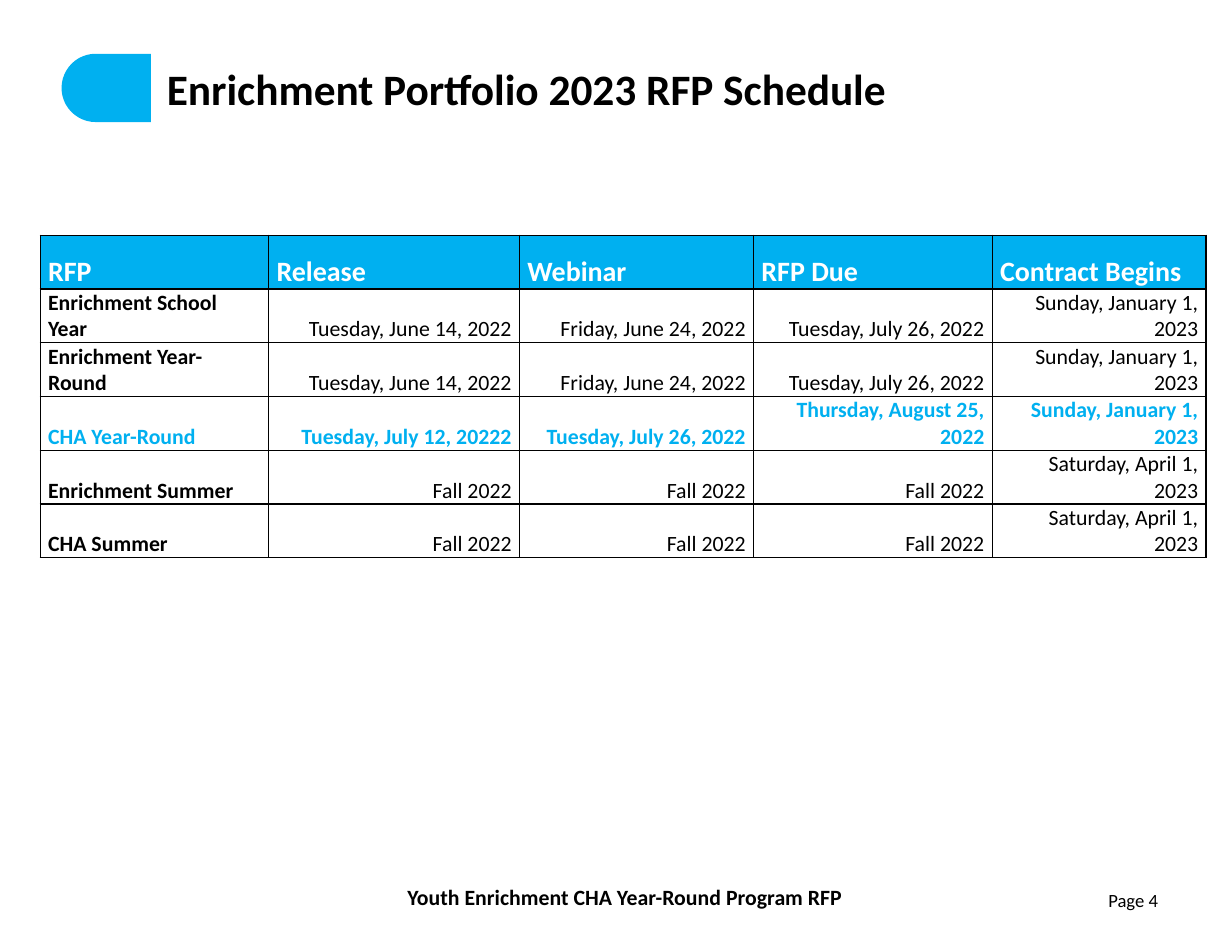
from dataclasses import dataclass

from lxml.etree import SubElement
from pptx import Presentation
from pptx.dml.color import RGBColor
from pptx.enum.shapes import MSO_SHAPE as Shape
from pptx.enum.text import MSO_ANCHOR as Anchor, PP_ALIGN as Align
from pptx.oxml import parse_xml
from pptx.oxml.ns import nsdecls, qn
from pptx.util import Inches, Pt


@dataclass(frozen=True)
class Theme:
    """Colours, typeface and type sizes of the slide."""
    accent: str = "00B0F0"
    dark: str = "000000"
    light: str = "FFFFFF"
    font: str = "Calibri"
    title: float = 27.9
    header: float = 18
    body: float = 14
    small: float = 12


class SlideBuilder:
    """Draws styled elements on the current slide."""

    def __init__(self, slide, theme):
        self.slide = slide
        self.theme = theme

    def fill_text(self, frame, text, size, color, bold=False, align=Align.LEFT,
                  anchor=Anchor.MIDDLE, margins=(0.11, 0.06)):
        """Fill a text frame with one formatted paragraph."""
        side, edge = (Inches(margin) for margin in margins)
        frame_format = {"word_wrap": True, "vertical_anchor": anchor,
                        "margin_left": side, "margin_right": side,
                        "margin_top": edge, "margin_bottom": edge}
        for name, value in frame_format.items():
            setattr(frame, name, value)
        paragraph = frame.paragraphs[0]
        paragraph.alignment = align
        run = paragraph.add_run()
        run.text = text
        font_format = {"name": self.theme.font, "size": Pt(size), "bold": bold}
        for name, value in font_format.items():
            setattr(run.font, name, value)
        run.font.color.rgb = RGBColor.from_string(color)

    def panel(self, kind, box, color, line_width=0):
        """Add a filled shape, outlined in its own colour if a width is given."""
        shape = self.slide.shapes.add_shape(kind, *map(Inches, box))
        shape.shadow.inherit = False
        shape.fill.solid()
        shape.fill.fore_color.rgb = RGBColor.from_string(color)
        if line_width:
            shape.line.color.rgb = RGBColor.from_string(color)
            shape.line.width = Pt(line_width)
        else:
            shape.line.fill.background()
        return shape

    def title(self, text, box):
        """Move the title placeholder in front and fill it."""
        title = self.slide.shapes.title
        for name, value in zip(("left", "top", "width", "height"), box):
            setattr(title, name, Inches(value))
        self.slide.shapes._spTree.append(title._element)
        self.fill_text(title.text_frame, text, self.theme.title, self.theme.dark, True)

    def text(self, text, box, size, **style):
        """Add a text box."""
        shape = self.slide.shapes.add_textbox(*map(Inches, box))
        self.fill_text(shape.text_frame, text, size, self.theme.dark, **style)

    def border(self, cell):
        """Draw a thin dark line on every side of a cell."""
        properties = cell._tc.get_or_add_tcPr()
        for index, side in enumerate(("lnL", "lnR", "lnT", "lnB")):
            line = parse_xml(f'<a:{side} {nsdecls("a")} w="{Pt(1)}"/>')
            fill = SubElement(line, qn("a:solidFill"))
            SubElement(fill, qn("a:srgbClr"), val=self.theme.dark)
            properties.insert(index, line)

    def table(self, rows, left, top, widths, row_height, highlighted):
        """Add a schedule with a header row and one highlighted row."""
        theme = self.theme
        frame = self.slide.shapes.add_table(
            len(rows), len(widths), Inches(left), Inches(top),
            Inches(sum(widths)), Inches(row_height * len(rows)))
        table = frame.table
        table.first_row = table.horz_banding = False
        for column, width in zip(table.columns, widths):
            column.width = Inches(width)
        for row_index, row in enumerate(rows):
            is_header = row_index == 0
            is_highlighted = row[0] == highlighted
            color = (theme.light if is_header
                     else theme.accent if is_highlighted else theme.dark)
            for column_index, text in enumerate(row):
                cell = table.cell(row_index, column_index)
                is_label = is_header or column_index == 0
                self.border(cell)
                if is_header:
                    cell.fill.solid()
                    cell.fill.fore_color.rgb = RGBColor.from_string(theme.accent)
                else:
                    cell.fill.background()
                self.fill_text(cell.text_frame, text,
                               theme.header if is_header else theme.body, color,
                               bold=is_label or is_highlighted,
                               align=Align.LEFT if is_label else Align.RIGHT)
                cell_format = {"vertical_anchor": Anchor.BOTTOM,
                               "margin_left": Inches(0.07),
                               "margin_right": Inches(0.07),
                               "margin_top": 0, "margin_bottom": 0}
                for name, value in cell_format.items():
                    setattr(cell, name, value)


SCHEDULE = [
    ("RFP", "Release", "Webinar", "RFP Due", "Contract Begins"),
    ("Enrichment School Year", "Tuesday, June 14, 2022", "Friday, June 24, 2022",
     "Tuesday, July 26, 2022", "Sunday, January 1, 2023"),
    ("Enrichment Year-Round", "Tuesday, June 14, 2022", "Friday, June 24, 2022",
     "Tuesday, July 26, 2022", "Sunday, January 1, 2023"),
    ("CHA Year-Round", "Tuesday, July 12, 20222", "Tuesday, July 26, 2022",
     "Thursday, August 25, 2022", "Sunday, January 1, 2023"),
    ("Enrichment Summer", *["Fall 2022"] * 3, "Saturday, April 1, 2023"),
    ("CHA Summer", *["Fall 2022"] * 3, "Saturday, April 1, 2023"),
]


def main():
    """Build and save the schedule slide."""
    presentation = Presentation()
    presentation.slide_width = Inches(11)
    presentation.slide_height = Inches(8.5)
    slide = presentation.slides.add_slide(presentation.slide_layouts[5])
    theme = Theme()
    builder = SlideBuilder(slide, theme)

    tab = builder.panel(Shape.ROUNDED_RECTANGLE, (0.55, 0.48, 8.44, 0.61), theme.accent)
    tab.adjustments[0] = 0.5
    builder.panel(Shape.RECTANGLE, (1.36, 0.41, 7.67, 0.86), theme.light, 2)
    builder.title("Enrichment Portfolio 2023 RFP Schedule", (1.38, 0.51, 9.07, 0.55))
    builder.table(SCHEDULE, 0.36, 2.1, (2.04, 2.24, 2.09, 2.13, 1.91), 0.48,
                  "CHA Year-Round")
    builder.text("Page 4", (7.88, 7.88, 2.57, 0.45), theme.small,
                 align=Align.RIGHT, anchor=Anchor.TOP)
    footer = builder.panel(Shape.RECTANGLE, (1.91, 7.69, 7.34, 0.64), theme.light, 2)
    builder.fill_text(footer.text_frame, "Youth Enrichment CHA Year-Round Program RFP",
                      theme.body, theme.dark, True, Align.CENTER)
    presentation.save("out.pptx")


if __name__ == "__main__":
    main()
